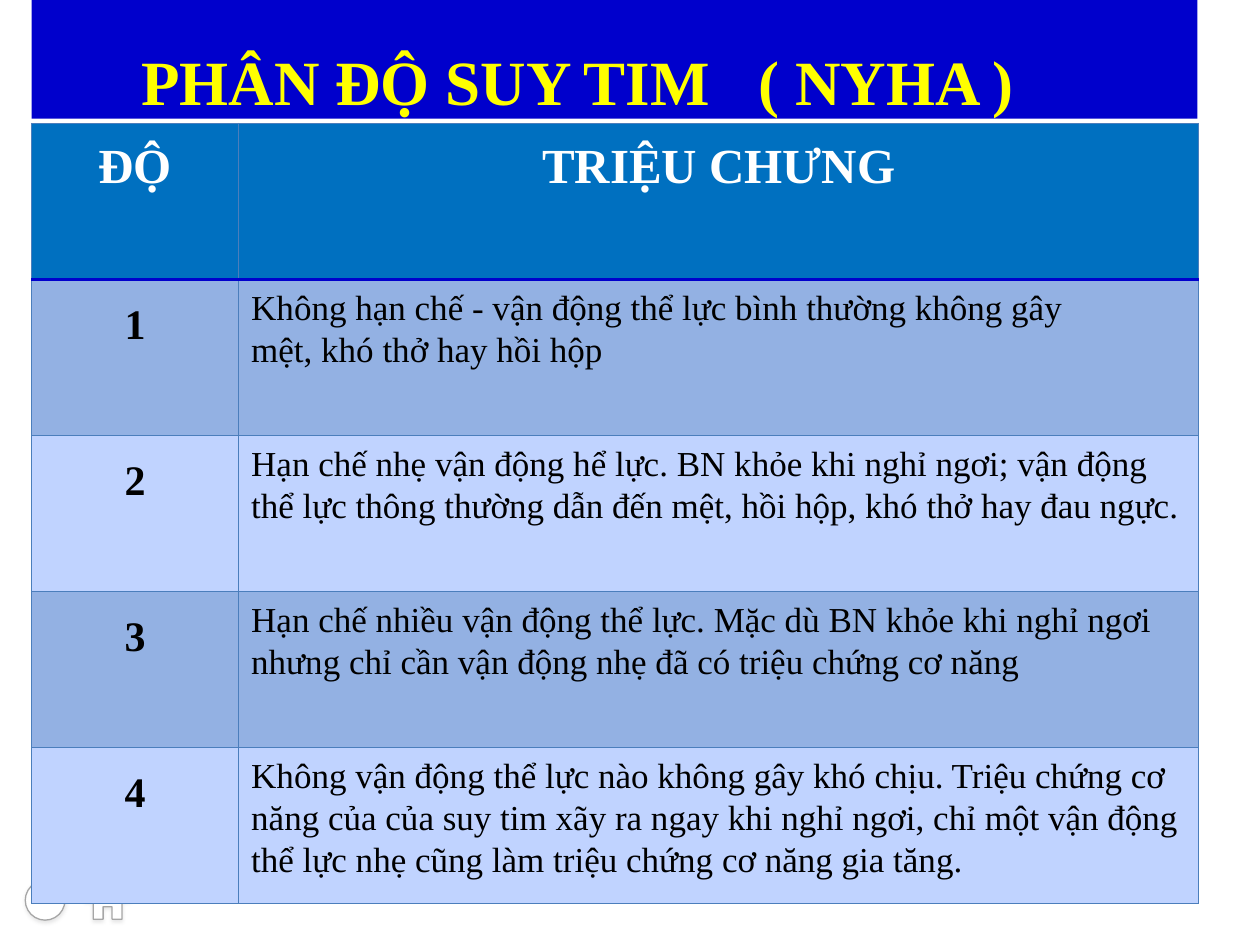
from lxml.etree import SubElement
from pptx import Presentation
from pptx.dml.color import RGBColor
from pptx.enum.shapes import MSO_SHAPE
from pptx.enum.text import MSO_ANCHOR, MSO_AUTO_SIZE, PP_ALIGN
from pptx.oxml import parse_xml
from pptx.oxml.ns import nsdecls, qn
from pptx.util import Cm, Pt

COLORS = {
    "title_fill": "0000CC", "title_text": "FFFF00", "header": "0070C0",
    "band": "93B1E3", "plain": "C0D3FF", "grid": "4B7EBC", "white": "FFFFFF",
    "black": "000000", "icon_line": "A6A6A6", "icon_shadow": "474749",
}
FONT = "Times New Roman"
TITLE = "PHÂN ĐỘ SUY TIM\t( NYHA )"
HEADERS = ("ĐỘ", "TRIỆU CHƯNG")
SYMPTOMS = (
    ("Không hạn chế - vận động thể lực bình thường không gây",
     "mệt, khó thở hay hồi hộp"),
    ("Hạn chế nhẹ vận động hể lực. BN khỏe khi nghỉ ngơi; vận động",
     "thể lực thông thường dẫn đến mệt, hồi hộp, khó thở hay đau ngực."),
    ("Hạn chế nhiều vận động thể lực. Mặc dù BN khỏe khi nghỉ ngơi",
     "nhưng chỉ cần vận động nhẹ đã có triệu chứng cơ năng"),
    ("Không vận động thể lực nào không gây khó chịu. Triệu chứng cơ",
     "năng của của suy tim xãy ra ngay khi nghỉ ngơi, chỉ một vận động",
     "thể lực nhẹ cũng làm triệu chứng cơ năng gia tăng."),
)


def color(name):
    """Return the named colour."""
    return RGBColor.from_string(COLORS[name])


def write(frame, lines, size, ink="black", bold=False, align=PP_ALIGN.LEFT, spacing=None):
    """Write each line as a formatted paragraph."""
    frame.text = "\n".join(lines)
    for para in frame.paragraphs:
        para.alignment = align
        if spacing:
            para.line_spacing = Pt(spacing)
        for span in para.runs:
            span.font.name = FONT
            span.font.size = Pt(size)
            span.font.bold = bold
            span.font.color.rgb = color(ink)


def style_cell(cell, fill, bottom=("grid", 0.75), top=("grid", 0.75)):
    """Fill a cell and draw its four borders."""
    cell.fill.solid()
    cell.fill.fore_color.rgb = color(fill)
    properties = cell._tc.get_or_add_tcPr()
    sides = {"lnL": ("grid", 0.75), "lnR": ("grid", 0.75), "lnT": top, "lnB": bottom}
    for index, (side, (ink, width)) in enumerate(sides.items()):
        properties.insert(index, parse_xml(
            f'<a:{side} {nsdecls("a")} w="{Pt(width)}"><a:solidFill>'
            f'<a:srgbClr val="{COLORS[ink]}"/></a:solidFill></a:{side}>'))


def add_title(page, left, top, width, height):
    """Place the title banner with a tab before the bracket."""
    title = page.shapes.title
    title.left, title.top, title.width, title.height = left, top, width, height
    title.fill.solid()
    title.fill.fore_color.rgb = color("title_fill")
    frame = title.text_frame
    frame.auto_size = MSO_AUTO_SIZE.NONE
    frame.word_wrap = True
    frame.vertical_anchor = MSO_ANCHOR.BOTTOM
    frame.margin_left = Cm(2.21)
    frame.margin_right = frame.margin_top = frame.margin_bottom = 0
    write(frame, [TITLE], 36, "title_text", bold=True)
    tabs = SubElement(frame.paragraphs[0]._p.get_or_add_pPr(), qn("a:tabLst"))
    SubElement(tabs, qn("a:tab"), pos=str(Cm(12.44)), algn="l")


def add_grades(page, left, top, width, height):
    """Place the table of grades and symptoms."""
    table = page.shapes.add_table(len(SYMPTOMS) + 1, 2, left, top, width, height).table
    table.columns[0].width = Cm(4.17)
    table.columns[1].width = width - Cm(4.17)
    rule = ("title_fill", 2)
    for column, heading in enumerate(HEADERS):
        cell = table.cell(0, column)
        cell.margin_top = Cm(0.32)
        write(cell.text_frame, [heading], 28, "white", bold=True, align=PP_ALIGN.CENTER)
        style_cell(cell, "header", bottom=rule)
    for row, lines in enumerate(SYMPTOMS, 1):
        grade, symptom = table.cell(row, 0), table.cell(row, 1)
        grade.margin_top = Cm(0.46)
        symptom.margin_top = Cm(0.14)
        symptom.margin_right = Cm(0.1)
        write(grade.text_frame, [str(row)], 24, bold=True, align=PP_ALIGN.CENTER)
        write(symptom.text_frame, lines, 20, spacing=24)
        for cell in (grade, symptom):
            style_cell(cell, "band" if row % 2 else "plain",
                       top=rule if row == 1 else ("grid", 0.75))


def style_icon(icon):
    """Give an icon its white fill, grey outline and faint shadow."""
    icon.fill.solid()
    icon.fill.fore_color.rgb = color("white")
    icon.line.color.rgb = color("icon_line")
    icon.line.width = Pt(0.75)
    icon.shadow.inherit = False
    effects = icon._element.spPr.find(qn("a:effectLst"))
    effects.append(parse_xml(
        f'<a:outerShdw {nsdecls("a")} blurRad="{Pt(2)}" dist="{Pt(1)}" dir="5400000">'
        f'<a:srgbClr val="{COLORS["icon_shadow"]}"><a:alpha val="12000"/></a:srgbClr>'
        '</a:outerShdw>'))


def add_icons(page, left, top, size):
    """Place the circle and the house in the lower corner."""
    style_icon(page.shapes.add_shape(MSO_SHAPE.OVAL, left, top, size, size))
    center, roof = left + Cm(1.66), top - Cm(0.03)
    right_half = [(0.44, 0.44), (0.29, 0.44), (0.29, 0.81), (0.09, 0.81), (0.09, 0.56)]
    outline = right_half + [(-x, y) for x, y in reversed(right_half)]
    builder = page.shapes.build_freeform(center, roof)
    builder.add_line_segments([(center + Cm(x), roof + Cm(y)) for x, y in outline], close=True)
    style_icon(builder.convert_to_shape())


def main():
    """Build and save the slide."""
    deck = Presentation()
    deck.slide_width, deck.slide_height = Cm(25.4), Cm(19.05)
    page = deck.slides.add_slide(deck.slide_layouts[5])
    add_icons(page, Cm(0.51), Cm(17.75), Cm(0.8))
    add_title(page, Cm(0.64), 0, Cm(23.5), Cm(2.39))
    add_grades(page, Cm(0.64), Cm(2.49), Cm(23.52), Cm(15.72))
    deck.save("out.pptx")


if __name__ == "__main__":
    main()
